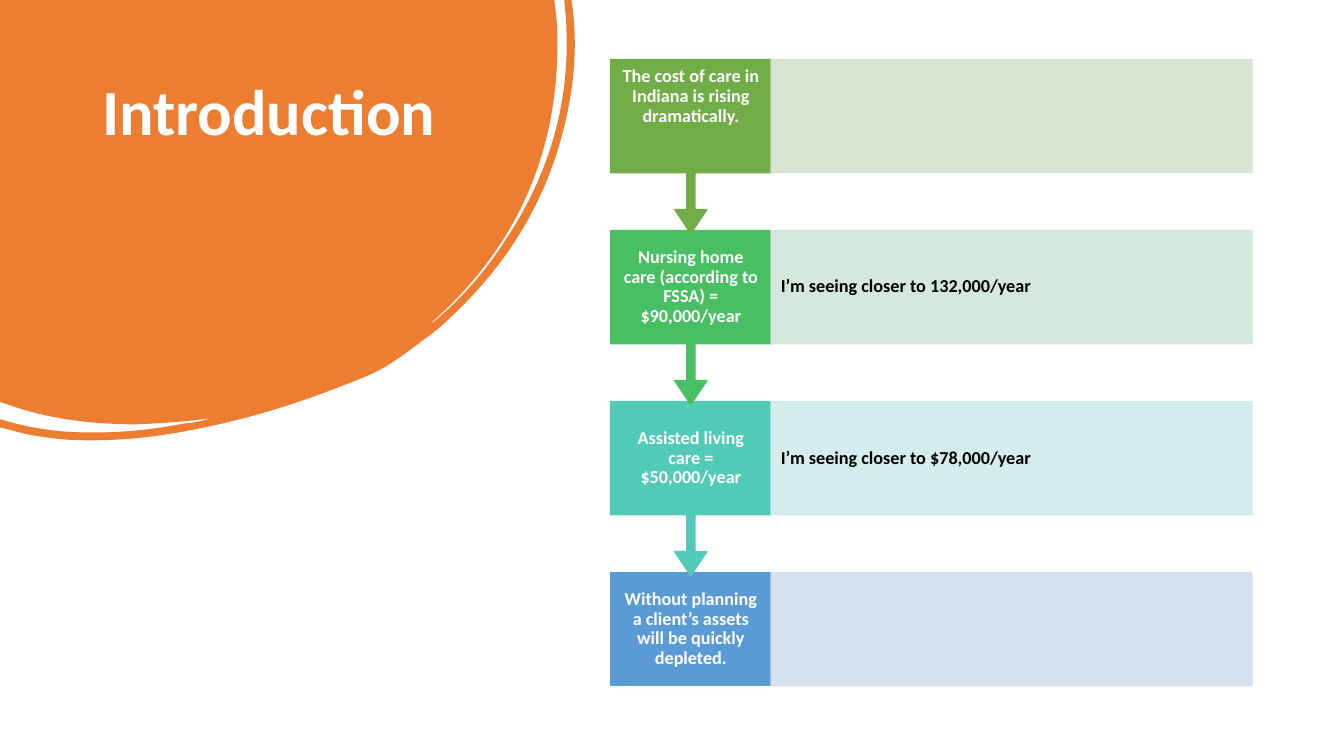
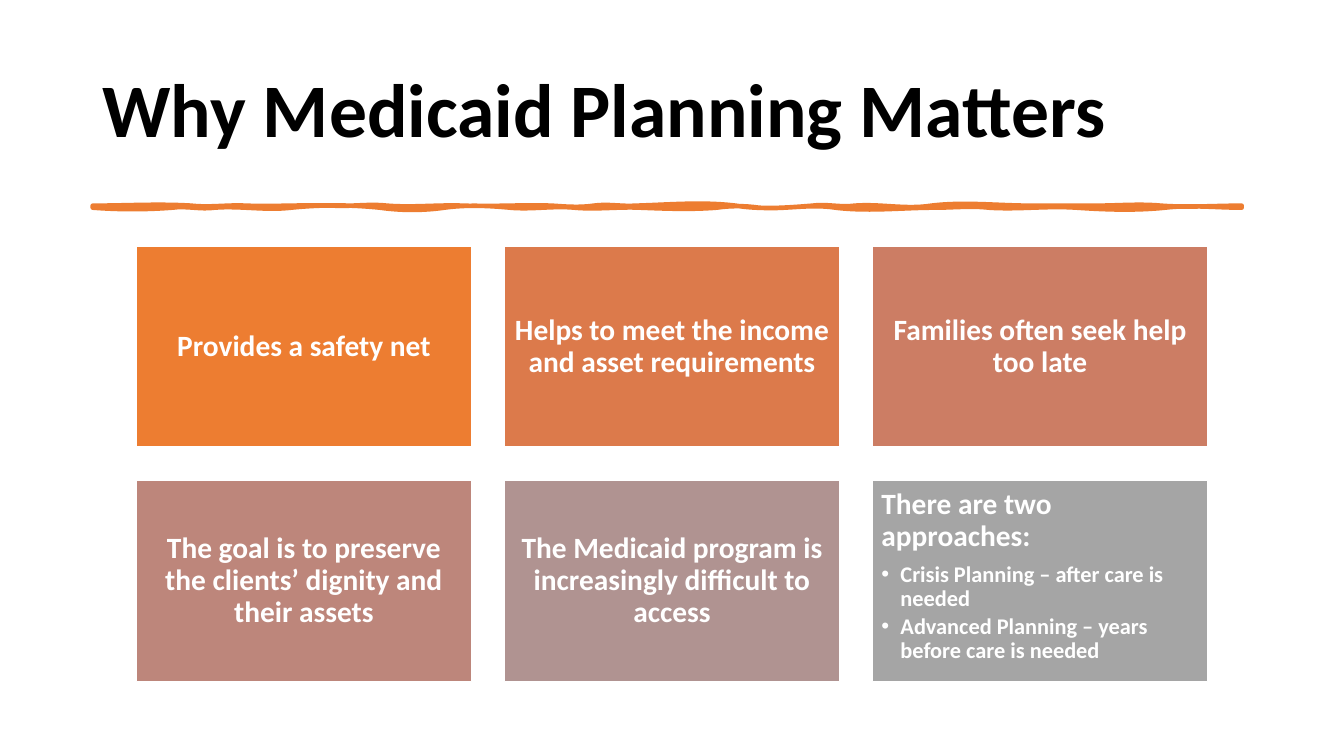
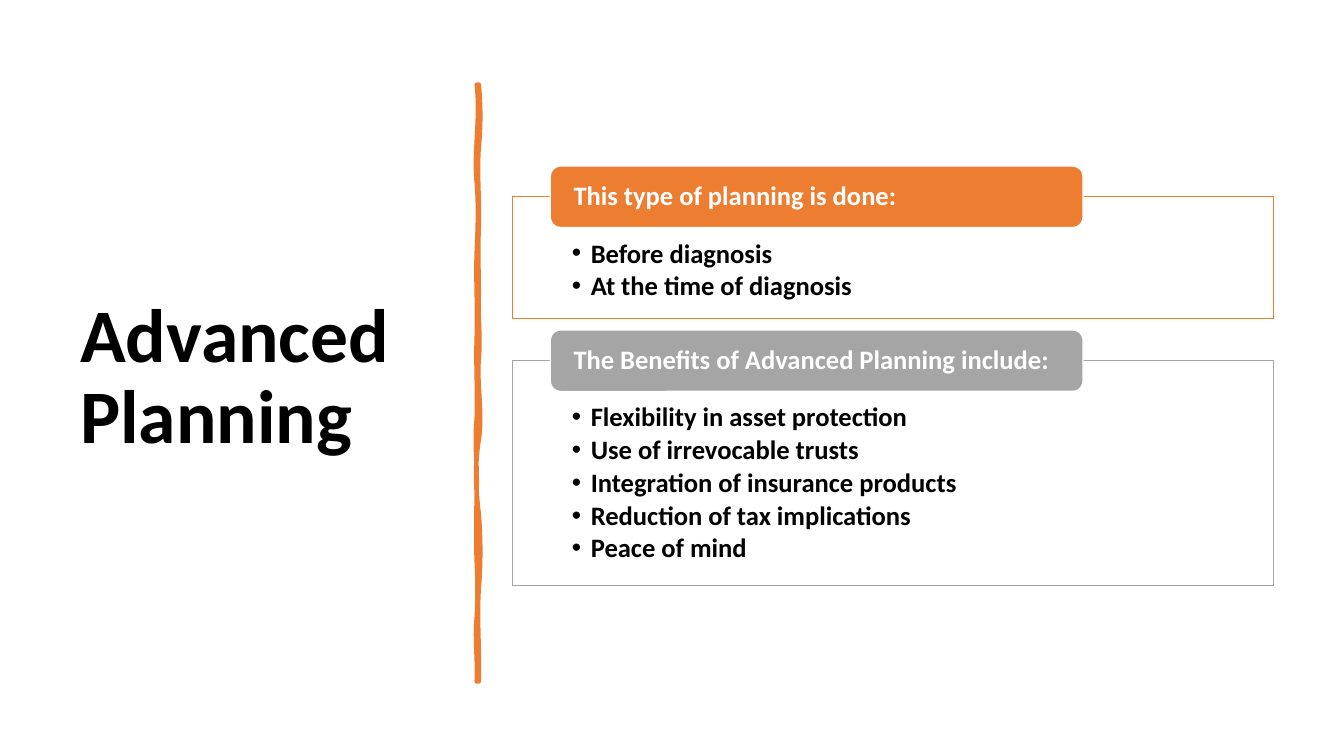
from dataclasses import dataclass

from lxml.etree import SubElement
from pptx import Presentation
from pptx.dml.color import RGBColor
from pptx.enum.shapes import MSO_SHAPE
from pptx.enum.text import MSO_ANCHOR, MSO_AUTO_SIZE, PP_ALIGN
from pptx.oxml.ns import qn
from pptx.util import Cm, Pt

FONT = "Calibri"
WHITE = RGBColor(0xFF, 0xFF, 0xFF)
BLACK = RGBColor(0x00, 0x00, 0x00)
ORANGE = RGBColor(0xED, 0x7D, 0x31)
GREY = RGBColor(0xA5, 0xA5, 0xA5)
GREEN = RGBColor(0x70, 0xAD, 0x47)
EMERALD = RGBColor(0x49, 0xBF, 0x64)
TEAL = RGBColor(0x52, 0xCA, 0xB8)
BLUE = RGBColor(0x5B, 0x9B, 0xD5)
PALE_GREEN = RGBColor(0xD5, 0xE3, 0xCF)
PALE_EMERALD = RGBColor(0xD0, 0xE7, 0xD8)
PALE_TEAL = RGBColor(0xD0, 0xEC, 0xEA)
PALE_BLUE = RGBColor(0xD2, 0xDE, 0xEF)
TERRACOTTA = RGBColor(0xDC, 0x7A, 0x4B)
CORAL = RGBColor(0xCC, 0x7D, 0x64)
ROSE = RGBColor(0xBD, 0x86, 0x7B)
MAUVE = RGBColor(0xB0, 0x93, 0x91)

OUTLINE_UNIT = Cm(2.54) / 100

# Outline steps: two numbers draw a line, six numbers a Bézier curve.
BLOB = [
    (0, 0), (550, 0), (552, 17),
    (553, 26, 553, 36, 553, 45), (553, 101, 542, 154, 518, 204),
    (496, 249, 465, 288, 427, 321), (429, 321, 430, 319, 432, 318),
    (459, 295, 482, 269, 501, 239), (543, 176, 565, 107, 562, 30),
    (562, 21, 561, 12, 560, 3), (560, 0), (567, 0), (568, 7),
    (574, 54, 568, 102, 553, 150), (533, 214, 497, 268, 448, 314),
    (439, 323, 429, 331, 419, 338), (409, 346, 399, 353, 387, 361),
    (375, 369, 360, 375, 344, 381), (299, 399, 252, 414, 203, 424),
    (157, 434, 110, 439, 63, 436), (45, 434, 28, 432, 12, 427),
    (0, 424), (0, 416), (4, 417),
    (23, 423, 42, 426, 61, 428), (103, 431, 143, 428, 184, 420),
    (189, 420, 193, 419, 198, 418), (202, 417, 206, 416, 210, 415),
    (186, 418, 161, 420, 136, 421), (92, 421, 48, 416, 7, 401), (0, 399),
]

# Edges of a hand-drawn rule: end of each wave, then its two bends.
LONG_RULE = (
    [(98, 0, -2), (152, 2, -1), (239, 1, -1), (292, 1, -2), (368, 2, -1),
     (456, 1, -1), (497, 1, 2), (539, -2, 1), (638, -1, -4), (714, 4, 2),
     (756, -2, 2), (832, -2, 4), (931, -4, 0), (995, 0, 0),
     (1060, 0, -2), (1140, 2, 0)],
    [(1064, 0, -3), (976, 3, 2), (889, -2, 2), (836, -2, 0), (737, 0, 4),
     (661, -4, 2), (619, -2, -2), (543, 2, 1), (478, -1, 2), (414, -2, 2),
     (349, -2, -3), (285, 3, 3), (197, -3, -3), (121, 3, -2),
     (79, 2, -2), (0, 2, 2)],
)
SHORT_RULE = (
    [(62, -2, -2), (142, 2, -1), (210, 1, 0), (272, 1, -2), (352, 2, -4),
     (426, 4, 3), (500, -2, -2), (592, 2, -1)],
    [(529, -1, 2), (473, -1, -1), (393, 1, 0), (331, 0, 2), (251, -1, 1),
     (166, -1, 1), (97, -1, -2), (0, 3, -4)],
)

COST_STEPS = [
    ("The cost of care in Indiana is rising dramatically.", "",
     GREEN, PALE_GREEN),
    ("Nursing home care (according to FSSA) = $90,000/year",
     "I’m seeing closer to 132,000/year", EMERALD, PALE_EMERALD),
    ("Assisted living care = $50,000/year",
     "I’m seeing closer to $78,000/year", TEAL, PALE_TEAL),
    ("Without planning a client’s assets will be quickly depleted.", "",
     BLUE, PALE_BLUE),
]
REASONS = [
    ("Provides a safety net", [], ORANGE),
    ("Helps to meet the income and asset requirements", [], TERRACOTTA),
    ("Families often seek help too late", [], CORAL),
    ("The goal is to preserve the clients’ dignity and their assets", [],
     ROSE),
    ("The Medicaid program is increasingly difficult to access", [], MAUVE),
    ("There are two approaches:",
     ["Crisis Planning – after care is needed",
      "Advanced Planning – years before care is needed"], GREY),
]
PANELS = [
    ("This type of planning is done:",
     ["Before diagnosis", "At the time of diagnosis"], ORANGE, 3.07),
    ("The Benefits of Advanced Planning include:",
     ["Flexibility in asset protection", "Use of irrevocable trusts",
      "Integration of insurance products", "Reduction of tax implications",
      "Peace of mind"], GREY, 5.66),
]


@dataclass
class Box:
    """A region in centimetres."""
    left: float
    top: float
    width: float
    height: float

    def lengths(self):
        return [Cm(n) for n in (self.left, self.top, self.width, self.height)]


def set_frame(frame, insets, anchor):
    frame.word_wrap = True
    frame.auto_size = MSO_AUTO_SIZE.NONE
    frame.vertical_anchor = anchor
    (frame.margin_left, frame.margin_top,
     frame.margin_right, frame.margin_bottom) = [Cm(n) for n in insets]


def write(para, text, size, color, align=PP_ALIGN.LEFT, after=0.35):
    """Fill a paragraph; after is the gap below as a share of the size."""
    para.alignment = align
    para.line_spacing = 0.9
    para.space_before = Pt(0)
    para.space_after = Pt(size * after)
    span = para.add_run()
    span.text = text
    span.font.name = FONT
    span.font.size = Pt(size)
    span.font.bold = True
    span.font.color.rgb = color


def write_bullet(para, text, size, color):
    write(para, text, size, color, after=0.15)
    properties = para._p.get_or_add_pPr()
    properties.set("marL", str(Cm(0.48)))
    properties.set("indent", str(-Cm(0.48)))
    SubElement(properties, qn("a:buFont")).set("typeface", "Arial")
    SubElement(properties, qn("a:buChar")).set("char", "•")


def paint(shape, fill, line, line_width=1):
    shape.shadow.inherit = False
    shape.fill.solid()
    shape.fill.fore_color.rgb = fill
    shape.line.color.rgb = line
    shape.line.width = Pt(line_width)


def add_panel(page, kind, box, fill, line):
    shape = page.shapes.add_shape(kind, *box.lengths())
    paint(shape, fill, line)
    return shape


def make_translucent(shape, percent):
    for color in shape.element.spPr.iter(qn("a:srgbClr")):
        SubElement(color, qn("a:alpha")).set("val", str(percent * 1000))


def add_outline(page, steps):
    """Build a freeform, then bend the segments that are curves."""
    steps = [[round(n * OUTLINE_UNIT) for n in step] for step in steps]
    builder = page.shapes.build_freeform(*steps[0])
    builder.add_line_segments([step[-2:] for step in steps[1:]], close=True)
    shape = builder.convert_to_shape()
    segments = list(shape.element.spPr.iter(qn("a:lnTo")))
    for segment, step in zip(segments, steps[1:]):
        if len(step) == 2:
            continue
        segment.tag = qn("a:cubicBezTo")
        segment.remove(segment[0])
        for x, y in zip(step[::2], step[1::2]):
            point = SubElement(segment, qn("a:pt"))
            point.set("x", str(x - shape.left))
            point.set("y", str(y - shape.top))
    return shape


def add_rough_rule(page, edges, left, top, rotation=0):
    """Draw a hand-drawn rule from its two wavy edges, in outline units."""
    steps = []
    position = left
    for edge, level in zip(edges, (top, top + 2)):
        steps.append((position, level))
        for offset, bend1, bend2 in edge:
            end = left + offset
            third = (end - position) / 3
            steps.append((position + third, level + bend1,
                          end - third, level + bend2, end, level))
            position = end
    rule = add_outline(page, steps)
    paint(rule, ORANGE, ORANGE, 3.25)
    rule.rotation = rotation


def add_page(deck, title, box, size=54, color=BLACK,
             anchor=MSO_ANCHOR.MIDDLE):
    page = deck.slides.add_slide(deck.slide_layouts[5])
    heading = page.shapes.title
    heading.left, heading.top, heading.width, heading.height = box.lengths()
    set_frame(heading.text_frame, (0.25, 0.13, 0.25, 0.13), anchor)
    write(heading.text_frame.paragraphs[0], title, size, color, after=0)
    return page


def add_blob(page):
    blob = add_outline(page, BLOB)
    paint(blob, ORANGE, ORANGE)
    blob.line.fill.background()
    page.shapes.title.element.addprevious(blob.element)


def add_cost_step(page, box, step, first, last):
    label, remark, color, pale = step
    label_width = box.width / 4
    arrow_height = box.height / 0.65
    if last:
        label_box = Box(box.left, box.top, label_width, box.height)
        shape = add_panel(page, MSO_SHAPE.RECTANGLE, label_box, color, color)
    else:
        label_box = Box(box.left, box.top, label_width, arrow_height)
        shape = add_panel(page, MSO_SHAPE.DOWN_ARROW_CALLOUT, label_box,
                          color, color)
        for i, share in enumerate((0.05, 0.1, 0.15, 0.65)):
            shape.adjustments[i] = share
    bottom_inset = 1.23 if first else 0.25
    set_frame(shape.text_frame, (0.28, 0.25, 0.28, bottom_inset),
              MSO_ANCHOR.MIDDLE)
    write(shape.text_frame.paragraphs[0], label, 13, WHITE, PP_ALIGN.CENTER)

    strip_box = Box(box.left + label_width, box.top,
                    box.width - label_width, box.height)
    strip = add_panel(page, MSO_SHAPE.RECTANGLE, strip_box, pale, pale)
    make_translucent(strip, 90)
    if remark:
        set_frame(strip.text_frame, (0.25, 0.46, 0.25, 0.46),
                  MSO_ANCHOR.MIDDLE)
        write(strip.text_frame.paragraphs[0], remark, 13, BLACK)


def add_cost_steps(page, box):
    """Stack the steps from the bottom up, so arrows lie over the next box."""
    step_height = 2.85
    last = len(COST_STEPS) - 1
    pitch = (box.height - step_height) / last
    for i in range(last, -1, -1):
        row = Box(box.left, box.top + i * pitch, box.width, step_height)
        add_cost_step(page, row, COST_STEPS[i], i == 0, i == last)


def add_reason(page, box, heading, bullets, color):
    card = add_panel(page, MSO_SHAPE.RECTANGLE, box, color, WHITE)
    frame = card.text_frame
    anchor = MSO_ANCHOR.TOP if bullets else MSO_ANCHOR.MIDDLE
    align = PP_ALIGN.LEFT if bullets else PP_ALIGN.CENTER
    set_frame(frame, (0.22, 0.22, 0.22, 0.22), anchor)
    write(frame.paragraphs[0], heading, 21, WHITE, align)
    for text in bullets:
        write_bullet(frame.add_paragraph(), text, 16, WHITE)


def add_reason_grid(page, box, columns=3, rows=2, gap=0.84):
    width = (box.width - gap * (columns - 1)) / columns
    height = (box.height - gap * (rows - 1)) / rows
    for i, reason in enumerate(REASONS):
        row, column = divmod(i, columns)
        card = Box(box.left + column * (width + gap),
                   box.top + row * (height + gap), width, height)
        add_reason(page, card, *reason)


def add_tabbed_panel(page, box, heading, bullets, color):
    panel = add_panel(page, MSO_SHAPE.RECTANGLE, box, WHITE, color)
    frame = panel.text_frame
    set_frame(frame, (1.5, 1.09, 1.5, 0.38), MSO_ANCHOR.TOP)
    for i, text in enumerate(bullets):
        para = frame.add_paragraph() if i else frame.paragraphs[0]
        write_bullet(para, text, 19, BLACK)

    tab_height = 1.55
    tab_box = Box(box.left + box.width * 0.05, box.top - tab_height / 2,
                  box.width * 0.7, tab_height)
    tab = add_panel(page, MSO_SHAPE.ROUNDED_RECTANGLE, tab_box, color, WHITE)
    set_frame(tab.text_frame, (0.51, 0, 0.51, 0), MSO_ANCHOR.MIDDLE)
    write(tab.text_frame.paragraphs[0], heading, 19, WHITE)


def add_tabbed_panels(page, box):
    gap = box.height - sum(height for *_, height in PANELS)
    top = box.top
    for heading, bullets, color, height in PANELS:
        add_tabbed_panel(page, Box(box.left, top, box.width, height),
                         heading, bullets, color)
        top += height + gap


def main():
    deck = Presentation()
    deck.slide_width, deck.slide_height = Cm(33.87), Cm(19.05)

    page = add_page(deck, "Introduction", Box(2.33, 1.88, 8.94, 5.64),
                    46, WHITE, MSO_ANCHOR.TOP)
    add_blob(page)
    add_cost_steps(page, Box(15.39, 1.5, 16.16, 15.78))

    page = add_page(deck, "Why Medicaid Planning Matters",
                    Box(2.33, 1.02, 29.21, 3.68))
    add_rough_rule(page, LONG_RULE, 92, 204)
    add_reason_grid(page, Box(3.44, 6.2, 26.99, 10.98))

    page = add_page(deck, "Advanced Planning", Box(1.77, 1.78, 9.5, 15.52))
    add_rough_rule(page, SHORT_RULE, 178, 379, rotation=90)
    add_tabbed_panels(page, Box(12.91, 4.96, 19.18, 9.79))

    deck.save("out.pptx")


if __name__ == "__main__":
    main()
